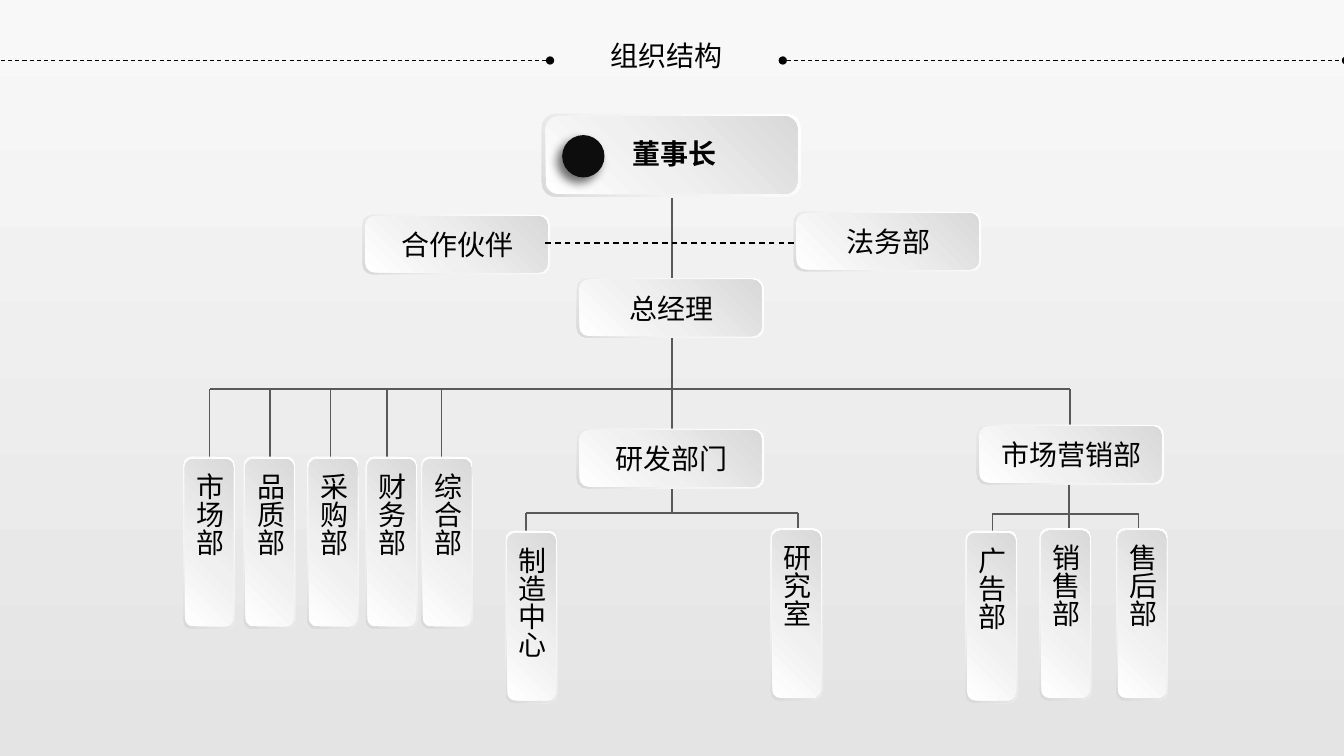
from dataclasses import dataclass
from typing import Any

from lxml import etree
from pptx import Presentation
from pptx.dml.color import RGBColor
from pptx.enum.dml import MSO_LINE
from pptx.enum.shapes import MSO_CONNECTOR, MSO_SHAPE
from pptx.enum.text import MSO_ANCHOR, PP_ALIGN
from pptx.oxml.ns import qn
from pptx.util import Emu, Inches, Pt

STRAIGHT = MSO_CONNECTOR.STRAIGHT
ROUNDED, ELLIPSE = MSO_SHAPE.ROUNDED_RECTANGLE, MSO_SHAPE.OVAL
LEFT, CENTER = PP_ALIGN.LEFT, PP_ALIGN.CENTER
MIDDLE = MSO_ANCHOR.MIDDLE
DASH = MSO_LINE.DASH

BLACK = RGBColor(0x00, 0x00, 0x00)
DOT = RGBColor(0x0D, 0x0D, 0x0D)
GREY = RGBColor(0x59, 0x59, 0x59)
WHITE = RGBColor(0xFF, 0xFF, 0xFF)
SILVER = RGBColor(0xD9, 0xD9, 0xD9)
RIM_MID = RGBColor(0xF2, 0xF2, 0xF2)
FACE_MID = RGBColor(0xF0, 0xF0, 0xF0)
BACK_TOP = RGBColor(0xF8, 0xF8, 0xF8)
BACK_BOTTOM = RGBColor(0xE4, 0xE4, 0xE4)

FONT = "Noto Sans CJK SC"
CELL = Inches(0.1)
COLS, ROWS = 133.4, 75
Stops = list[tuple[int, RGBColor]]
RIM: Stops = [(0, WHITE), (62, RIM_MID), (100, SILVER)]
FACE: Stops = [(0, WHITE), (42, FACE_MID), (100, SILVER)]
BACK: Stops = [(0, BACK_TOP), (100, BACK_BOTTOM)]


@dataclass(frozen=True)
class Style:
    rim: tuple[float, float]
    face: tuple[float, float]
    label: tuple[float, float]
    shift: tuple[float, float] = (0.1, 0)
    rotation: int = 0
    align: Any = CENTER
    bold: bool = False
    wrap: bool = True


@dataclass(frozen=True)
class Tile:
    text: str
    x: float
    y: float
    style: Style


@dataclass(frozen=True)
class Line:
    x1: float
    y1: float
    x2: float
    y2: float
    color: RGBColor = GREY
    width: float = 1
    dash: Any = None
    ends: bool = False


CHAIR = Style((25.7, 8.2), (25, 7.7), (10.4, 5.1), (0.35, -0.15),
              align=LEFT, bold=True, wrap=False)
WIDE = Style((18.6, 5.9), (18.1, 5.6), (17.8, 5.1))
TALL = Style((17.1, 5.1), (16.6, 4.8), (5.2, 16.4), (0.05, 0.25),
             rotation=90, align=LEFT)

AXIS, BUS, DEPT_TOP = 66.7, 38.6, 46.9
FORK_LEFT, FORK_RIGHT, TEAM_TOP = 50.9, 51, 53.2
SALES_X = 106.2
DEPTS = {"市场部": 20.8, "品质部": 26.8, "采购部": 32.8, "财务部": 38.4, "综合部": 43.8}
DEPT_TILE_X = [20.75, 26.75, 33.05, 38.85, 44.35]

TOP_TILES = [
    Tile("董事长", 66.65, 15.4, CHAIR),
    Tile("合作伙伴", 45.3, 24.25, WIDE),
    Tile("法务部", 88.1, 23.95, WIDE),
]
LOWER_TILES = [
    Tile("总经理", 66.55, 30.55, WIDE),
    *[Tile(t, x, 53.85, TALL) for t, x in zip(DEPTS, DEPT_TILE_X)],
    Tile("研发部门", 66.55, 45.5, WIDE),
    Tile("市场营销部", 106.25, 45.1, WIDE),
    Tile("制造中心", 52.75, 61.2, TALL),
    Tile("研究室", 79.05, 60.95, TALL),
    Tile("广告部", 98.4, 61.2, TALL),
    Tile("销售部", 105.75, 60.95, TALL),
    Tile("售后部", 113.35, 60.95, TALL),
]
RULES = [Line(x1, 6, x2, 6, BLACK, 0.75, DASH, True)
         for x1, x2 in ((-1, 54.6), (77.7, 133.6))]
LINES = [
    Line(AXIS, 19.6, AXIS, 29.9),
    Line(SALES_X, BUS, DEPTS["市场部"], BUS),
    Line(SALES_X, BUS, SALES_X, 43.2),
    *[Line(x, BUS, x, DEPT_TOP) for x in DEPTS.values()],
    Line(78.8, 24.1, 54.1, 24.1, BLACK, 1, DASH),
    Line(AXIS, 33.1, AXIS, 43.4),
    *[Line(x, FORK_LEFT, x, TEAM_TOP) for x in (52.2, 79.2)],
    Line(79.2, FORK_LEFT, 52.2, FORK_LEFT),
    Line(AXIS, 48.5, AXIS, FORK_LEFT),
    Line(106.1, 48, 106.1, TEAM_TOP),
    Line(113.1, FORK_RIGHT, 98.5, FORK_RIGHT),
    *[Line(x, FORK_RIGHT, x, TEAM_TOP) for x in (98.5, 113)],
]


def grid(*cells: float) -> list[Emu]:
    return [Emu(round(c * CELL)) for c in cells]


def centred(x: float, y: float, size: tuple[float, float]) -> list[Emu]:
    w, h = size
    return grid(x - w / 2, y - h / 2, w, h)


def apply(obj: Any, values: dict[str, Any]) -> None:
    for name, value in values.items():
        setattr(obj, name, value)


def add_xml(parent: Any, tag: str, **attrs: Any) -> Any:
    return etree.SubElement(parent, qn(tag), {k: str(v) for k, v in attrs.items()})


def set_gradient(fill: Any, element: Any, stops: Stops, angle: int) -> None:
    fill.gradient()
    fill.gradient_angle = 360 - angle
    grad = next(element.iter(qn("a:gradFill")))
    grad.set("rotWithShape", "0")
    gs_list = grad.find(qn("a:gsLst"))
    for gs in list(gs_list):
        gs_list.remove(gs)
    for pos, color in stops:
        gs = add_xml(gs_list, "a:gs", pos=pos * 1000)
        add_xml(gs, "a:srgbClr", val=color)


def add_plate(shapes: Any, tile: Tile, size: tuple[float, float],
              stops: Stops, angle: int) -> None:
    sp = shapes.add_shape(ROUNDED, *centred(tile.x, tile.y, size))
    sp.rotation = tile.style.rotation
    sp.shadow.inherit = False
    set_gradient(sp.fill, sp.element, stops, angle)
    sp.line.fill.background()


def add_label(shapes: Any, text: str, place: list[Emu], style: Style) -> None:
    sp = shapes.add_textbox(*place)
    tf = sp.text_frame
    apply(tf, {"word_wrap": style.wrap, "vertical_anchor": MIDDLE})
    if style.rotation:
        sp.element.txBody.bodyPr.set("vert", "eaVert")
    p = tf.paragraphs[0]
    p.alignment = style.align
    r = p.add_run()
    r.text = text
    apply(r.font, {"size": Pt(20), "name": FONT, "bold": style.bold})
    r.font.color.rgb = BLACK
    add_xml(next(sp.element.iter(qn("a:rPr"))), "a:ea", typeface=FONT)


def add_dot(shapes: Any) -> None:
    sp = shapes.add_shape(ELLIPSE, *grid(55.8, 13.4, 4.2, 4.2))
    sp.shadow.inherit = False
    sp.fill.solid()
    sp.fill.fore_color.rgb = DOT
    sp.line.fill.background()
    effects = sp.element.spPr.find(qn("a:effectLst"))
    shadow = add_xml(effects, "a:outerShdw", blurRad=Pt(7), dist=Pt(5),
                     dir=135 * 60000, algn="ctr", rotWithShape=0)
    color = add_xml(shadow, "a:srgbClr", val=BLACK)
    add_xml(color, "a:alpha", val=57000)


def add_tile(shapes: Any, tile: Tile) -> None:
    style = tile.style
    group = shapes.add_group_shape().shapes
    add_plate(group, tile, style.rim, RIM, 135)
    add_plate(group, tile, style.face, FACE, 315)
    if style is CHAIR:
        add_dot(group)
    dx, dy = style.shift
    add_label(group, tile.text, centred(tile.x + dx, tile.y + dy, style.label), style)


def add_line(shapes: Any, line: Line) -> None:
    c = shapes.add_connector(STRAIGHT, *grid(line.x1, line.y1, line.x2, line.y2))
    c.line.color.rgb = line.color
    apply(c.line, {"width": Pt(line.width), "dash_style": line.dash})
    if line.ends:
        ln = c.element.spPr.find(qn("a:ln"))
        for tag in ("a:headEnd", "a:tailEnd"):
            add_xml(ln, tag, type="oval")
    add_xml(c.element.spPr, "a:effectLst")


def main() -> None:
    prs = Presentation()
    prs.slide_width, prs.slide_height = grid(COLS, ROWS)
    s = prs.slides.add_slide(prs.slide_layouts[6])
    set_gradient(s.background.fill, s.element, BACK, 90)
    title = Style((0, 0), (0, 0), (0, 0), align=LEFT, wrap=False)
    add_label(s.shapes, "组织结构", grid(59.6, 2.9, 13.4, 5.1), title)
    for tile in TOP_TILES:
        add_tile(s.shapes, tile)
    for line in RULES + LINES:
        add_line(s.shapes, line)
    for tile in LOWER_TILES:
        add_tile(s.shapes, tile)
    prs.save("out.pptx")


if __name__ == "__main__":
    main()
